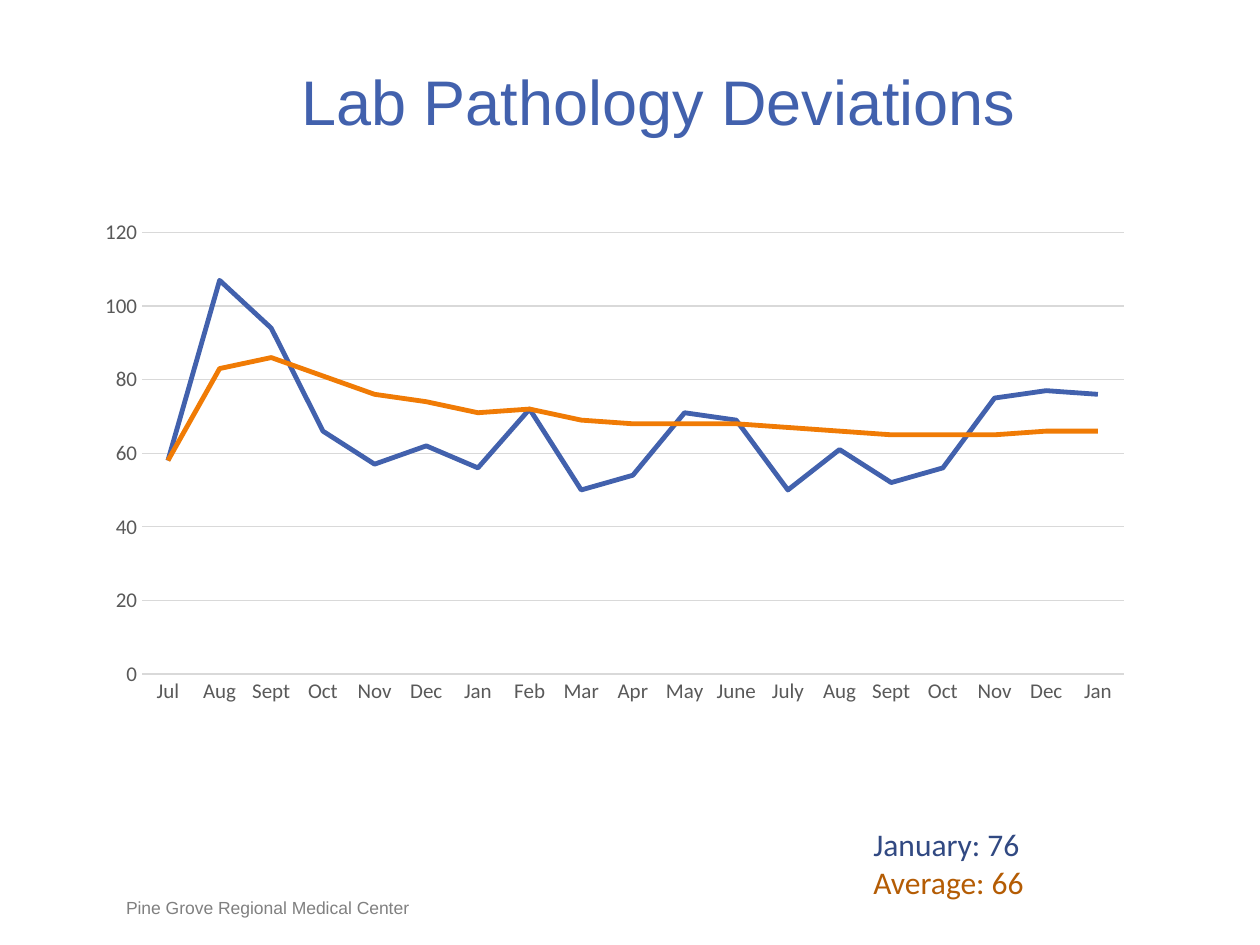
from dataclasses import dataclass

from pptx import Presentation
from pptx.chart.data import CategoryChartData
from pptx.dml.color import RGBColor
from pptx.enum.chart import XL_CHART_TYPE, XL_TICK_MARK
from pptx.enum.text import MSO_ANCHOR, PP_ALIGN
from pptx.slide import Slide
from pptx.util import Emu, Pt

BLUE = RGBColor(0x42, 0x61, 0xAD)
NAVY = RGBColor(0x31, 0x49, 0x82)
ORANGE = RGBColor(0xF0, 0x7B, 0x05)
BROWN = RGBColor(0xB4, 0x5C, 0x04)
GREY = RGBColor(0x80, 0x80, 0x80)
DARK = RGBColor(0x59, 0x59, 0x59)
PALE = RGBColor(0xD9, 0xD9, 0xD9)
SCALE = 914400 / 126


@dataclass(frozen=True)
class Box:
    left: int
    top: int
    width: int
    height: int


@dataclass(frozen=True)
class Label:
    box: Box
    lines: tuple[str, ...]
    colors: tuple[RGBColor, ...]
    size: int
    font: str = "Arial"
    inset: bool = False
    align: PP_ALIGN = PP_ALIGN.LEFT
    anchor: MSO_ANCHOR = MSO_ANCHOR.TOP


@dataclass(frozen=True)
class Series:
    name: str
    color: RGBColor
    values: tuple[int, ...]


LABELS = (
    Label(Box(126, 897, 400, 21), ("Pine Grove Regional Medical Center",), (GREY,), 10,
          anchor=MSO_ANCHOR.BOTTOM),
    Label(Box(123, 63, 1071, 77), ("Lab Pathology Deviations",), (BLUE,), 36,
          align=PP_ALIGN.CENTER),
    Label(Box(861, 819, 252, 89), ("January: 76", "Average: 66"), (NAVY, BROWN), 18,
          font="Calibri", inset=True),
)
MONTHS = ("Jul Aug Sept Oct Nov Dec Jan Feb Mar Apr May June "
          "July Aug Sept Oct Nov Dec Jan").split()
SERIES = (
    Series("Series 1", BLUE, (58, 107, 94, 66, 57, 62, 56, 72, 50, 54,
                              71, 69, 50, 61, 52, 56, 75, 77, 76)),
    Series("Series 2", ORANGE, (58, 83, 86, 81, 76, 74, 71, 72, 69, 68,
                                68, 68, 67, 66, 65, 65, 65, 66, 66)),
)


def px(count: int) -> Emu:
    """Turn pixels into EMU."""
    return Emu(round(count * SCALE))


def place(box: Box) -> tuple[Emu, ...]:
    """Give the left, top, width and height of a box in EMU."""
    return px(box.left), px(box.top), px(box.width), px(box.height)


def write(slide: Slide, label: Label) -> None:
    """Draw a label with one colour per line."""
    frame = slide.shapes.add_textbox(*place(label.box)).text_frame
    frame.word_wrap = True
    frame.vertical_anchor = label.anchor
    if not label.inset:
        frame.margin_left = frame.margin_right = 0
        frame.margin_top = frame.margin_bottom = 0
    frame.text = "\n".join(label.lines)
    for para, color in zip(frame.paragraphs, label.colors):
        para.alignment = label.align
        font = para.runs[0].font
        font.name, font.size = label.font, Pt(label.size)
        font.color.rgb = color


def plot(slide: Slide, box: Box) -> None:
    """Draw the monthly counts and their running average as lines."""
    data = CategoryChartData()
    data.categories = MONTHS
    for item in SERIES:
        data.add_series(item.name, item.values)
    chart = slide.shapes.add_chart(XL_CHART_TYPE.LINE, *place(box), data).chart
    chart.has_legend = chart.has_title = False
    chart.font.name, chart.font.size = "Calibri", Pt(10)
    for axis in (chart.category_axis, chart.value_axis):
        axis.major_tick_mark = axis.minor_tick_mark = XL_TICK_MARK.NONE
        font = axis.tick_labels.font
        font.name, font.size = "Calibri", Pt(12)
        font.color.rgb = DARK
    base = chart.category_axis.format.line
    base.color.rgb, base.width = PALE, Pt(1)
    scale = chart.value_axis
    scale.minimum_scale, scale.maximum_scale, scale.major_unit = 0, 120, 20
    scale.format.line.fill.background()
    grid = scale.major_gridlines.format.line
    grid.color.rgb, grid.width = PALE, Pt(0.75)
    for line, item in zip(chart.plots[0].series, SERIES):
        line.smooth = False
        line.format.line.color.rgb = item.color
        line.format.line.width = Pt(2.75)


def main() -> None:
    """Build the slide and save it."""
    deck = Presentation()
    deck.slide_width, deck.slide_height = px(1260), px(945)
    slide = deck.slides.add_slide(deck.slide_layouts[6])
    for label in LABELS:
        write(slide, label)
    plot(slide, Box(84, 210, 1061, 504))
    deck.save("out.pptx")


if __name__ == "__main__":
    main()
